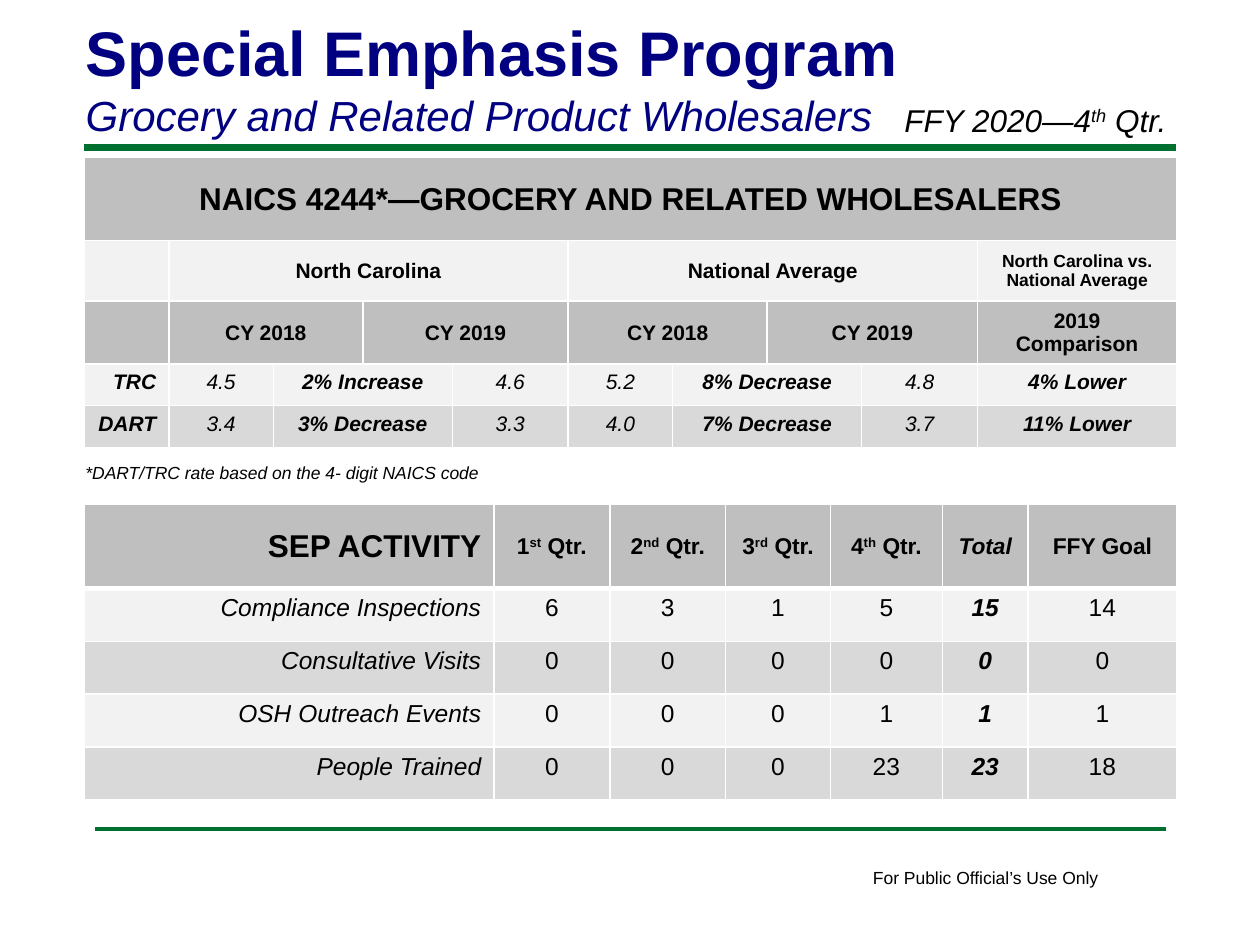
from lxml.etree import SubElement
from pptx import Presentation
from pptx.dml.color import RGBColor
from pptx.enum.shapes import MSO_CONNECTOR
from pptx.enum.text import MSO_ANCHOR, MSO_AUTO_SIZE, PP_ALIGN
from pptx.oxml.ns import qn
from pptx.util import Inches, Pt

NAVY = RGBColor(0x00, 0x00, 0x80)
GREEN = RGBColor(0x00, 0x70, 0x30)
BLACK = RGBColor(0x00, 0x00, 0x00)
WHITE = RGBColor(0xFF, 0xFF, 0xFF)
HEADER_GRAY = RGBColor(0xBF, 0xBF, 0xBF)
LIGHT_GRAY = RGBColor(0xF2, 0xF2, 0xF2)
MIDDLE_GRAY = RGBColor(0xD9, 0xD9, 0xD9)

# Content: text between carets is superscript
TITLE = [
    ("Special Emphasis Program", {"size": Pt(36), "bold": True, "italic": False}),
    ("Grocery and Related Product Wholesalers",
     {"size": Pt(24), "bold": False, "italic": True}),
]

# text, (left, top, width, height), wrap, format
TEXT_BOXES = [
    ("FFY 2020—4^th^ Qtr.", (7.08, 0.75, 2.5, 0.4), True,
     {"size": Pt(18), "italic": True}),
    ("*DART/TRC rate based on the 4- digit NAICS code", (0.58, 3.62, 3.37, 0.27), True,
     {"size": Pt(10), "italic": True}),
    ("For Public Official’s Use Only", (6.83, 6.83, 2.01, 0.27), False,
     {"size": Pt(10)}),
]

# left, right, y, width in points
RULES = [(0.67, 9.33, 1.17, 4), (0.75, 9.25, 6.58, 2)]

# Each rate cell is (text, columns spanned)
RATE_COLUMNS = [0.67, 0.83, 0.71, 0.71, 0.92, 0.83, 0.75, 0.75, 0.92, 1.58]
RATE_HEIGHTS = [0.66, 0.48, 0.49, 0.33, 0.33]
RATE_FILLS = [HEADER_GRAY, LIGHT_GRAY, HEADER_GRAY, LIGHT_GRAY, MIDDLE_GRAY]
RATE_ROWS = [
    [("NAICS 4244*—GROCERY AND RELATED WHOLESALERS", 10)],
    [("", 1), ("North Carolina", 4), ("National Average", 4),
     ("North Carolina vs. National Average", 1)],
    [("", 1), ("CY 2018", 2), ("CY 2019", 2), ("CY 2018", 2), ("CY 2019", 2),
     ("2019 Comparison", 1)],
    [("TRC", 1), ("4.5", 1), ("2% Increase", 2), ("4.6", 1),
     ("5.2", 1), ("8% Decrease", 2), ("4.8", 1), ("4% Lower", 1)],
    [("DART", 1), ("3.4", 1), ("3% Decrease", 2), ("3.3", 1),
     ("4.0", 1), ("7% Decrease", 2), ("3.7", 1), ("11% Lower", 1)],
]

ACTIVITY_COLUMNS = [3.25, 0.92, 0.92, 0.83, 0.89, 0.68, 1.18]
ACTIVITY_HEIGHTS = [0.67, 0.42, 0.42, 0.42, 0.42]
ACTIVITY_FILLS = [HEADER_GRAY, LIGHT_GRAY, MIDDLE_GRAY, LIGHT_GRAY, MIDDLE_GRAY]
ACTIVITY_ROWS = [
    ["SEP ACTIVITY", "1^st^ Qtr.", "2^nd^ Qtr.", "3^rd^ Qtr.", "4^th^ Qtr.",
     "Total", "FFY Goal"],
    ["Compliance Inspections", 6, 3, 1, 5, 15, 14],
    ["Consultative Visits", 0, 0, 0, 0, 0, 0],
    ["OSH Outreach Events", 0, 0, 0, 1, 1, 1],
    ["People Trained", 0, 0, 0, 23, 23, 18],
]
TOTAL_COLUMN = 5


def write(paragraph, text, format_values, color=BLACK, alignment=PP_ALIGN.LEFT):
    paragraph.alignment = alignment
    for index, part in enumerate(text.split("^")):
        run = paragraph.add_run()
        run.text = part
        run.font.name = "Arial"
        run.font.color.rgb = color
        for name, value in format_values.items():
            setattr(run.font, name, value)
        if index % 2:
            run.font._element.set("baseline", "30000")


def add_border(cell, side, points):
    properties = cell._tc.get_or_add_tcPr()
    line = SubElement(properties, qn(f"a:ln{side}"), w=str(Pt(points)))
    color = SubElement(SubElement(line, qn("a:solidFill")), qn("a:srgbClr"))
    color.set("val", str(WHITE))


def add_grid(slide, top, columns, heights, fills, header_border):
    """Add a filled table with white borders."""
    frame = slide.shapes.add_table(
        len(heights), len(columns), Inches(0.67), Inches(top),
        Inches(sum(columns)), Inches(sum(heights)))
    table = frame.table
    for column, width in zip(table.columns, columns):
        column.width = Inches(width)
    for row_index, (row, height) in enumerate(zip(table.rows, heights)):
        row.height = Inches(height)
        for cell in row.cells:
            add_border(cell, "L", 1)
            add_border(cell, "R", 1)
            add_border(cell, "T", header_border if row_index == 1 else 1)
            add_border(cell, "B", header_border if row_index == 0 else 1)
            cell.fill.solid()
            cell.fill.fore_color.rgb = fills[row_index]
    return table


def add_rates(slide):
    table = add_grid(slide, 1.25, RATE_COLUMNS, RATE_HEIGHTS, RATE_FILLS, 1)
    for row_index, row in enumerate(RATE_ROWS):
        is_header = row_index < 3
        column = 0
        for text, span in row:
            cell = table.cell(row_index, column)
            if span > 1:
                cell.merge(table.cell(row_index, column + span - 1))
            cell.vertical_anchor = MSO_ANCHOR.MIDDLE if is_header else MSO_ANCHOR.TOP
            size = 18 if row_index == 0 else 10 if " vs. " in text else 12
            is_rate = "." in text and not is_header
            label = column == 0 and not is_header
            if text:
                write(cell.text_frame.paragraphs[0], text,
                      {"size": Pt(size), "bold": not is_rate, "italic": not is_header},
                      alignment=PP_ALIGN.RIGHT if label else PP_ALIGN.CENTER)
            column += span


def add_activity(slide):
    table = add_grid(slide, 4, ACTIVITY_COLUMNS, ACTIVITY_HEIGHTS, ACTIVITY_FILLS, 3)
    for row_index, row in enumerate(ACTIVITY_ROWS):
        is_header = row_index == 0
        for column, value in enumerate(row):
            cell = table.cell(row_index, column)
            cell.vertical_anchor = MSO_ANCHOR.MIDDLE if is_header else MSO_ANCHOR.TOP
            is_label, is_total = column == 0, column == TOTAL_COLUMN
            size = 14 if not is_header else 18 if is_label else 13
            write(cell.text_frame.paragraphs[0], str(value),
                  {"size": Pt(size), "bold": is_header or is_total,
                   "italic": is_total or (is_label and not is_header)},
                  alignment=PP_ALIGN.RIGHT if is_label else PP_ALIGN.CENTER)


def main():
    presentation = Presentation()
    presentation.slide_width, presentation.slide_height = Inches(10), Inches(7.5)
    slide = presentation.slides.add_slide(presentation.slide_layouts[5])

    # Green rules
    for left, right, y, width in RULES:
        rule = slide.shapes.add_connector(
            MSO_CONNECTOR.STRAIGHT, Inches(left), Inches(y), Inches(right), Inches(y))
        rule.line.color.rgb = GREEN
        rule.line.width = Pt(width)
        SubElement(rule._element.spPr, qn("a:effectLst"))

    # Title and subtitle
    title = slide.shapes.title
    title.left, title.top, title.width, title.height = map(Inches, (0.58, 0.06, 8.25, 1.11))
    frame = title.text_frame
    frame.vertical_anchor = MSO_ANCHOR.TOP
    frame.auto_size = MSO_AUTO_SIZE.NONE
    for index, (text, format_values) in enumerate(TITLE):
        paragraph = frame.add_paragraph() if index else frame.paragraphs[0]
        write(paragraph, text, format_values, NAVY)

    # Period, footnote and footer
    for text, place, wrap, format_values in TEXT_BOXES:
        frame = slide.shapes.add_textbox(*map(Inches, place)).text_frame
        frame.word_wrap = wrap
        frame.auto_size = MSO_AUTO_SIZE.SHAPE_TO_FIT_TEXT
        write(frame.paragraphs[0], text, format_values)

    # Tables
    add_rates(slide)
    add_activity(slide)
    presentation.save("out.pptx")


if __name__ == "__main__":
    main()
